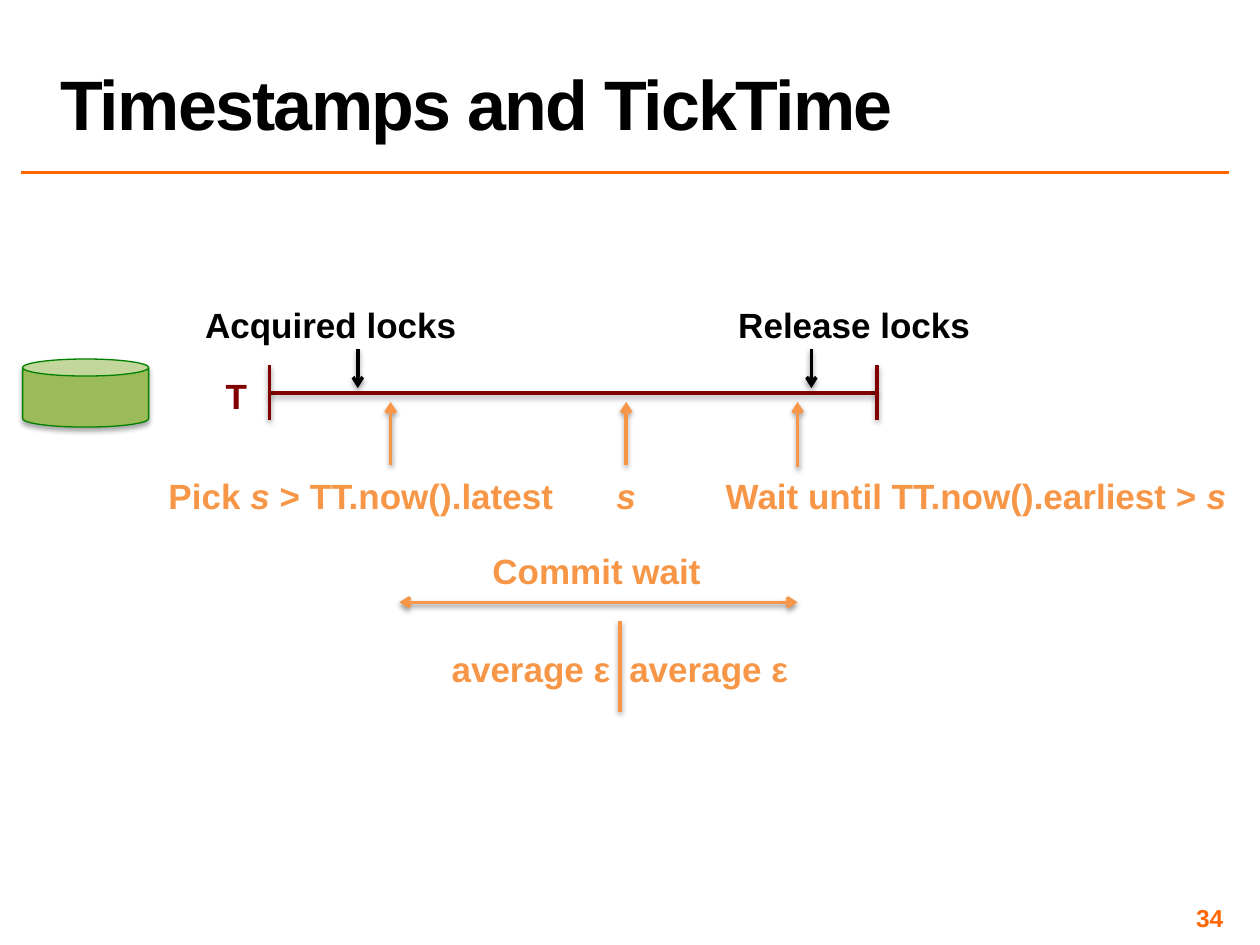
from lxml.etree import SubElement
from pptx import Presentation
from pptx.dml.color import RGBColor
from pptx.enum.shapes import MSO_CONNECTOR, MSO_SHAPE
from pptx.enum.text import MSO_ANCHOR, PP_ALIGN
from pptx.oxml.ns import qn
from pptx.util import Inches, Pt

COLORS = {
    "black": "000000", "accent": "FF6600", "maroon": "800000",
    "orange": "F79646", "green": "9BBB59", "green edge": "008000",
}

TITLE = "Timestamps and TickTime"
PAGE_NUMBER = "34"

# Key places on the timeline, in inches
AXIS_Y, AXIS_START, AXIS_END = 3.12, 2.14, 6.96
LOCK_Y, EVENT_Y, COMMIT_Y, AVERAGE_Y = 2.36, 3.72, 4.31, 5.09
LABEL_HEIGHT = 0.44

# Labels: left, top, width, colour, runs of (text, italic)
LABELS = [
    (1.65, 2.92, 0.45, "maroon", [("T", False)]),
    (1.52, LOCK_Y, 2.21, "black", [("Acquired locks", False)]),
    (5.75, LOCK_Y, 2.06, "black", [("Release locks", False)]),
    (1.23, EVENT_Y, 3.27, "orange",
     [("Pick ", False), ("s ", True), ("> TT.now().latest", False)]),
    (4.79, EVENT_Y, 0.36, "orange", [("s", True)]),
    (5.65, EVENT_Y, 4.19, "orange",
     [("Wait until TT.now().earliest > ", False), ("s", True)]),
    (3.80, COMMIT_Y, 1.87, "orange", [("Commit wait", False)]),
    (3.48, AVERAGE_Y, 1.47, "orange", [("average ε", False)]),
    (4.89, AVERAGE_Y, 1.47, "orange", [("average ε", False)]),
]

LOCK_ARROWS = [2.84, 6.44]
EVENT_ARROWS = [(3.10, 3.69), (4.97, 3.69), (6.33, 3.71)]


def color(name):
    return RGBColor.from_string(COLORS[name])


def add_effects(shape, alpha=None, distance=1.6):
    """Give the shape an effect list, with a soft shadow below if alpha is set."""
    effects = SubElement(shape._element.spPr, qn("a:effectLst"))
    if alpha:
        shadow = SubElement(
            effects, qn("a:outerShdw"), blurRad=str(Pt(3.1)),
            dist=str(Pt(distance)), dir="5400000", rotWithShape="0")
        black = SubElement(shadow, qn("a:srgbClr"), val=COLORS["black"])
        SubElement(black, qn("a:alpha"), val=str(alpha * 1000))


def add_line(slide, start, end, color_name, arrows=(), shadow=38):
    line = slide.shapes.add_connector(
        MSO_CONNECTOR.STRAIGHT, *(Inches(value) for value in (*start, *end)))
    line.line.color.rgb = color(color_name)
    line.line.width = Pt(2)
    for arrow in arrows:
        SubElement(line.line._get_or_add_ln(), qn(f"a:{arrow}"), type="arrow")
    add_effects(line, shadow)


def add_text(slide, box, runs, size, color_name, align=PP_ALIGN.CENTER,
             anchor=MSO_ANCHOR.TOP, wrap=True, inset=None):
    shape = slide.shapes.add_textbox(*(Inches(value) for value in box))
    frame = shape.text_frame
    frame.word_wrap = wrap
    frame.vertical_anchor = anchor
    if inset is not None:
        frame.margin_left = frame.margin_right = Inches(inset)
        frame.margin_top = frame.margin_bottom = Inches(inset)
    paragraph = frame.paragraphs[0]
    paragraph.alignment = align
    for text, italic in runs:
        run = paragraph.add_run()
        run.text = text
        run.font.name = "Arial"
        run.font.size = Pt(size)
        run.font.bold = True
        run.font.italic = italic
        run.font.color.rgb = color(color_name)
    return paragraph


def main():
    presentation = Presentation()
    presentation.slide_width = Inches(10)
    presentation.slide_height = Inches(7.5)
    slide = presentation.slides.add_slide(presentation.slide_layouts[6])

    # Title, rule and page number
    add_line(slide, (0.17, 1.37), (9.75, 1.37), "accent", shadow=None)
    title = add_text(slide, (0.38, 0.02, 9.37, 1.17), [(TITLE, False)], 40,
                     "black", PP_ALIGN.LEFT, MSO_ANCHOR.BOTTOM)
    title.line_spacing = 0.8
    title.runs[0].font._element.set("spc", "-100")
    add_text(slide, (7.42, 7.17, 2.33, 0.23), [(PAGE_NUMBER, False)], 14,
             "accent", PP_ALIGN.RIGHT, MSO_ANCHOR.MIDDLE, inset=0.04)

    # Transaction timeline with end bars
    add_line(slide, (AXIS_START, AXIS_Y), (AXIS_END, AXIS_Y), "maroon")
    for x in (AXIS_START, AXIS_END):
        add_line(slide, (x, 2.9), (x, 3.33), "maroon")

    # Lock arrows from above, event arrows from below
    for x in LOCK_ARROWS:
        add_line(slide, (x, 2.77), (x, 3.08), "black", ["tailEnd"])
    for x, bottom in EVENT_ARROWS:
        add_line(slide, (x, bottom), (x, 3.19), "orange", ["tailEnd"])

    # Commit wait span and its divider
    add_line(slide, (3.17, 4.78), (6.33, 4.78), "orange", ["headEnd", "tailEnd"])
    add_line(slide, (4.92, 5.65), (4.92, 4.93), "orange")

    # Labels
    for left, top, width, color_name, runs in LABELS:
        add_text(slide, (left, top, width, LABEL_HEIGHT), runs, 20, color_name,
                 wrap=False)

    # Database
    database = slide.shapes.add_shape(
        MSO_SHAPE.CAN, Inches(0.18), Inches(2.85), Inches(1), Inches(0.54))
    database.fill.solid()
    database.fill.fore_color.rgb = color("green")
    database.line.color.rgb = color("green edge")
    database.line.width = Pt(0.75)
    add_effects(database, 35, 1.8)

    presentation.save("out.pptx")


if __name__ == "__main__":
    main()
